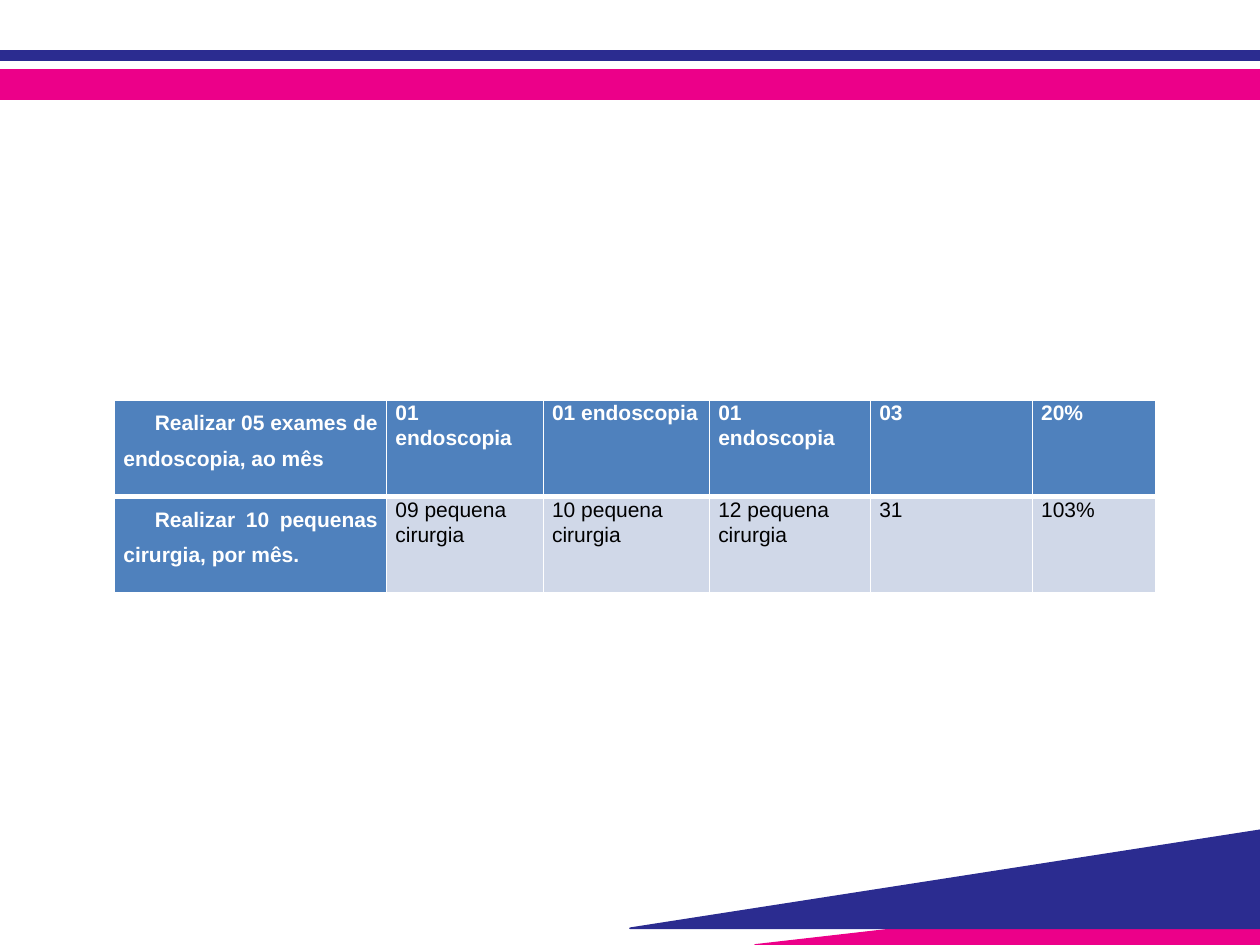
from lxml import etree
from pptx import Presentation
from pptx.dml.color import RGBColor
from pptx.enum.shapes import MSO_SHAPE
from pptx.enum.text import PP_ALIGN
from pptx.oxml.ns import qn
from pptx.util import Pt

RECTANGLE = MSO_SHAPE.RECTANGLE
JUSTIFY, LEFT = PP_ALIGN.JUSTIFY, PP_ALIGN.LEFT

# Content
ROWS = [
    ["Realizar 05 exames de endoscopia, ao mês", "01 endoscopia",
     "01 endoscopia", "01 endoscopia", "03", "20%"],
    ["Realizar 10 pequenas cirurgia, por mês.", "09 pequena cirurgia",
     "10 pequena cirurgia", "12 pequena cirurgia", "31", "103%"],
]

# Layout, in points
WIDTH, HEIGHT = 720, 540
TABLE_LEFT, TABLE_TOP, ROW_HEIGHT = 65.5, 228.5, 55.2
COLUMN_WIDTHS = [155.5, 89.5, 95, 92, 92.5, 70.5]
NAVY, PINK, WHITE, BLACK = "2B2C90", "EC0089", "FFFFFF", "000000"
HEADER_FILL, BODY_FILL = "4F81BD", "D0D8E8"
BANDS = [(29, 5.5, NAVY), (40, 16.5, PINK)]  # top, height, colour
WEDGES = [  # tip x, top y, base y, colour
    (431.5, 507, HEIGHT, PINK),
    (360, 474.5, 530.5, NAVY),
]


def rgb(value):
    return RGBColor.from_string(value)


def paint(sp, color):
    sp.shadow.inherit = False
    sp.fill.solid()
    sp.fill.fore_color.rgb = rgb(color)
    sp.line.color.rgb = rgb(color)
    sp.line.width = Pt(0.96)


def set_borders(cell, widths):
    tc_pr = cell._tc.get_or_add_tcPr()
    for side, width in zip("LRTB", widths):
        ln = etree.SubElement(tc_pr, qn(f"a:ln{side}"), w=str(Pt(width)))
        fill = etree.SubElement(ln, qn("a:solidFill"))
        etree.SubElement(fill, qn("a:srgbClr"), val=WHITE)


def fill_cell(cell, text, row, column):
    highlighted = row == 0 or column == 0
    set_borders(cell, (1, 1, 1, 3) if row == 0 else (1, 1, 3, 1))
    cell.fill.solid()
    cell.fill.fore_color.rgb = rgb(HEADER_FILL if highlighted else BODY_FILL)
    cell.margin_left = cell.margin_right = Pt(5)
    cell.margin_top = cell.margin_bottom = 0
    cell.text = text
    p = cell.text_frame.paragraphs[0]
    p.alignment = LEFT if column else JUSTIFY
    p.line_spacing = 1.07 if column else 1.5
    p.space_after = Pt(8)
    if column == 0:
        p._p.get_or_add_pPr().set("indent", str(Pt(18)))
    p.font.name = "Arial"
    p.font.size = Pt(12)
    p.font.bold = highlighted
    p.font.color.rgb = rgb(WHITE if highlighted else BLACK)


prs = Presentation()
prs.slide_width, prs.slide_height = Pt(WIDTH), Pt(HEIGHT)
s = prs.slides.add_slide(prs.slide_layouts[6])

# Bands across the top
for top, height, color in BANDS:
    paint(s.shapes.add_shape(RECTANGLE, 0, Pt(top), Pt(WIDTH), Pt(height)), color)

# Wedges in the lower right corner
for tip, top, base, color in WEDGES:
    builder = s.shapes.build_freeform(Pt(WIDTH), Pt(top))
    builder.add_line_segments([(Pt(tip), Pt(base)), (Pt(WIDTH), Pt(base))])
    paint(builder.convert_to_shape(), color)

# Table of goals and results
table = s.shapes.add_table(
    len(ROWS), len(COLUMN_WIDTHS), Pt(TABLE_LEFT), Pt(TABLE_TOP),
    Pt(sum(COLUMN_WIDTHS)), Pt(ROW_HEIGHT * len(ROWS))).table
for column, width in zip(table.columns, COLUMN_WIDTHS):
    column.width = Pt(width)
for i, texts in enumerate(ROWS):
    table.rows[i].height = Pt(ROW_HEIGHT)
    for j, text in enumerate(texts):
        fill_cell(table.cell(i, j), text, i, j)

prs.save("out.pptx")
